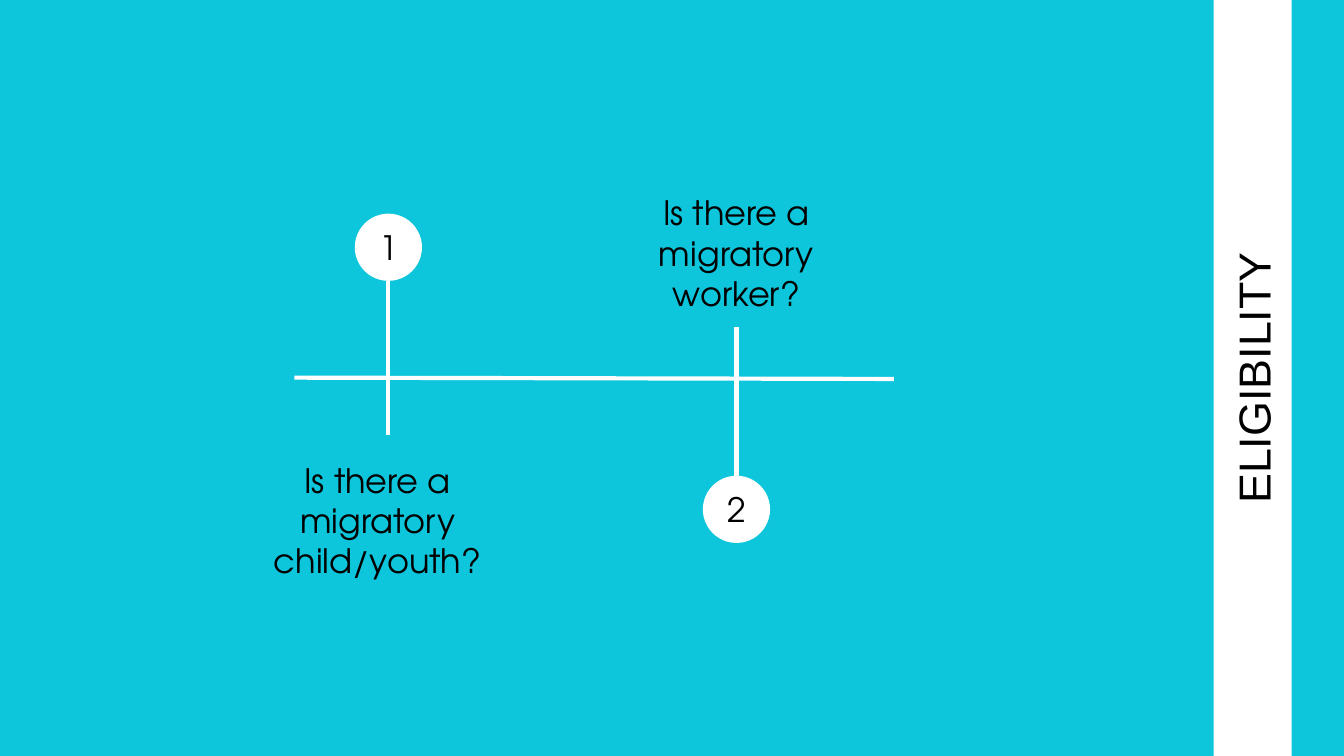
from dataclasses import dataclass

import pptx
import pptx.util
import pptx.dml.color
import pptx.enum.shapes
import pptx.enum.text
import pptx.oxml.ns
import lxml.etree

Inches = pptx.util.Inches
Pt = pptx.util.Pt
RGBColor = pptx.dml.color.RGBColor
Shape = pptx.enum.shapes.MSO_SHAPE
Anchor = pptx.enum.text.MSO_ANCHOR


@dataclass(frozen=True)
class Theme:
    background: RGBColor = RGBColor(0x0E, 0xC6, 0xDC)
    white: RGBColor = RGBColor(0xFF, 0xFF, 0xFF)
    ink: RGBColor = RGBColor(0, 0, 0)
    title_font: str = "Arial"
    body_font: str = "TeX Gyre Adventor"
    title_size: int = 24
    body_size: int = 18
    line_width: float = 2.25


@dataclass(frozen=True)
class Box:
    left: float
    top: float
    width: float
    height: float

    @property
    def bottom(self):
        return self.top + self.height

    def lengths(self):
        return [Inches(v) for v in (self.left, self.top, self.width, self.height)]


THEME = Theme()
BADGE_SIZE = 0.5
QUESTION_HEIGHT = 0.82


def write(shape, text, font, size, anchor):
    frame = shape.text_frame
    frame.word_wrap = True
    frame.vertical_anchor = anchor
    frame.margin_left = frame.margin_right = Inches(0.1)
    frame.margin_top = frame.margin_bottom = Inches(0.1)
    frame.text = text
    paragraph = frame.paragraphs[0]
    paragraph.alignment = pptx.enum.text.PP_ALIGN.CENTER
    run_font = paragraph.runs[0].font
    run_font.name = font
    run_font.size = Pt(size)
    run_font.color.rgb = THEME.ink


def add_white_shape(slide, kind, box):
    shape = slide.shapes.add_shape(kind, *box.lengths())
    shape.shadow.inherit = False
    shape.fill.solid()
    shape.fill.fore_color.rgb = THEME.white
    shape.line.fill.background()
    return shape


def add_line(slide, x1, y1, x2, y2):
    line = slide.shapes.add_connector(
        pptx.enum.shapes.MSO_CONNECTOR.STRAIGHT,
        Inches(x1), Inches(y1), Inches(x2), Inches(y2))
    line.line.color.rgb = THEME.white
    line.line.width = Pt(THEME.line_width)
    lxml.etree.SubElement(line._element.spPr, pptx.oxml.ns.qn("a:effectLst"))


def add_title_band(slide, box, title):
    add_white_shape(slide, Shape.RECTANGLE, box)
    # Title centred on the band and turned to read upwards
    length, thickness = 9.32, 0.63
    heading = slide.shapes.add_textbox(*Box(
        box.left + (box.width - length) / 2,
        box.top + (box.height - thickness) / 2,
        length, thickness).lengths())
    heading.rotation = 270
    write(heading, title, THEME.title_font, THEME.title_size, Anchor.MIDDLE)


def add_milestone(slide, box, number, question, stem_offset, stem_length, badge_on_top):
    stem_x = box.left + stem_offset
    if badge_on_top:
        badge_top = box.top
        stem_top = badge_top + BADGE_SIZE
        question_top = box.bottom - QUESTION_HEIGHT
    else:
        badge_top = box.bottom - BADGE_SIZE
        stem_top = badge_top - stem_length
        question_top = box.top

    add_line(slide, stem_x, stem_top, stem_x, stem_top + stem_length)
    badge = add_white_shape(slide, Shape.OVAL, Box(
        stem_x - BADGE_SIZE / 2, badge_top, BADGE_SIZE, BADGE_SIZE))
    write(badge, number, THEME.body_font, THEME.body_size, Anchor.MIDDLE)
    label = slide.shapes.add_textbox(
        *Box(box.left, question_top, box.width, QUESTION_HEIGHT).lengths())
    write(label, question, THEME.body_font, THEME.body_size, Anchor.TOP)
    label.text_frame.paragraphs[0].space_after = Pt(16)


def add_timeline(slide, box):
    # Horizontal axis
    add_line(slide, box.left + 0.38, box.top + 1.48, box.left + 4.84, box.top + 1.49)
    # Milestones on alternating sides of the axis
    add_milestone(slide, Box(box.left, box.top + 0.26, 2, 2.55), "1",
                  "Is there a migratory child/youth?", 1.08, 1.15, True)
    add_milestone(slide, Box(box.left + 2.67, box.top, 2, 2.71), "2",
                  "Is there a migratory worker?", 1, 1.11, False)


def main():
    deck = pptx.Presentation()
    deck.slide_width = Inches(10)
    deck.slide_height = deck.slide_width * 9 // 16
    slide = deck.slides.add_slide(deck.slide_layouts[6])
    slide.background.fill.solid()
    slide.background.fill.fore_color.rgb = THEME.background

    add_title_band(slide, Box(9.03, 0, 0.58, deck.slide_height.inches), "ELIGIBILITY")
    add_timeline(slide, Box(1.81, 1.33, 4.84, 2.81))
    deck.save("out.pptx")


if __name__ == "__main__":
    main()
